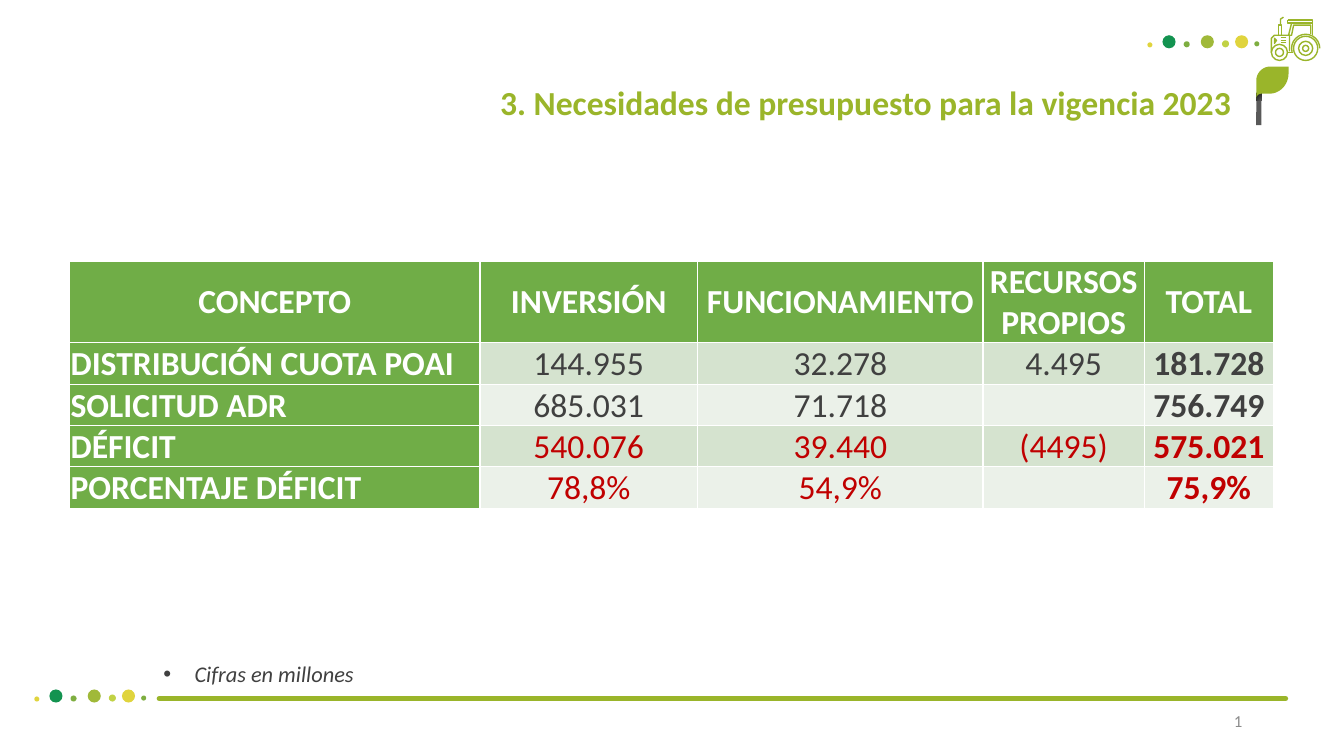
from math import cos, radians, sin

from lxml.etree import SubElement
from pptx import Presentation
from pptx.dml.color import RGBColor
from pptx.enum.dml import MSO_THEME_COLOR
from pptx.enum.shapes import MSO_CONNECTOR, MSO_SHAPE
from pptx.enum.text import MSO_ANCHOR, PP_ALIGN
from pptx.oxml import parse_xml
from pptx.oxml.ns import nsdecls, qn
from pptx.util import Inches, Pt

LIME = RGBColor(0x9A, 0xB5, 0x2A)
EMERALD = RGBColor(0x13, 0x93, 0x50)
LEAF = RGBColor(0x7E, 0xAE, 0x40)
OLIVE = RGBColor(0xA0, 0xB9, 0x39)
PALE_LIME = RGBColor(0xC1, 0xD2, 0x45)
YELLOW = RGBColor(0xE0, 0xD4, 0x3D)
HEADER = RGBColor(0x70, 0xAD, 0x47)
BANDS = RGBColor(0xD5, 0xE3, 0xCF), RGBColor(0xEB, 0xF1, 0xE9)
WHITE = RGBColor(0xFF, 0xFF, 0xFF)
INK = RGBColor(0x40, 0x40, 0x40)
RED = RGBColor(0xC0, 0x00, 0x00)
GRAY = RGBColor(0x8C, 0x8C, 0x8C)
STEM = RGBColor(0x59, 0x59, 0x59)
STEM_SHADE = RGBColor(0x0D, 0x0D, 0x0D)

DOTS = [(0, 0.07, 0.05, YELLOW), (0.15, 0, 0.13, EMERALD), (0.36, 0.06, 0.06, LEAF),
        (0.53, 0, 0.13, OLIVE), (0.74, 0.05, 0.07, PALE_LIME), (0.87, 0, 0.13, YELLOW),
        (1.06, 0.06, 0.05, LEAF)]
COLUMNS = [4.07, 2.16, 2.83, 1.6, 1.28]
ROWS = [0.69, 0.35, 0.35, 0.35, 0.35]
BUDGET = [
    ["CONCEPTO", "INVERSIÓN", "FUNCIONAMIENTO", "RECURSOS PROPIOS", "TOTAL"],
    ["DISTRIBUCIÓN CUOTA POAI", "144.955", "32.278", "4.495", "181.728"],
    ["SOLICITUD ADR", "685.031", "71.718", "", "756.749"],
    ["DÉFICIT", "540.076", "39.440", "(4495)", "575.021"],
    ["PORCENTAJE DÉFICIT", "78,8%", "54,9%", "", "75,9%"],
]


class SlideBuilder:
    def __init__(self, slide, font="Calibri"):
        self.slide = slide
        self.shapes = slide.shapes
        self.font = font

    def style(self, paragraph, size, color, bold=False, italic=False, align=PP_ALIGN.LEFT):
        paragraph.alignment = align
        paragraph.space_before = Pt(0)
        font = paragraph.font
        font.name, font.size, font.bold, font.italic = self.font, Pt(size), bold, italic
        font.color.rgb = color

    def paint(self, shape, fill=None, line=None):
        shape.shadow.inherit = False
        if fill is None:
            shape.fill.background()
        else:
            shape.fill.solid()
            shape.fill.fore_color.rgb = fill
        if line is None:
            shape.line.fill.background()
        else:
            shape.line.color.rgb = line
            shape.line.width = Pt(1)
        return shape

    def preset(self, kind, left, top, width, height, fill=None, line=None):
        box = map(Inches, (left, top, width, height))
        return self.paint(self.shapes.add_shape(kind, *box), fill, line)

    def circle(self, x, y, radius, line):
        self.preset(MSO_SHAPE.OVAL, x - radius, y - radius, 2 * radius, 2 * radius, line=line)

    def outline(self, points, close=False, fill=None, line=None):
        start, *rest = [(Inches(x), Inches(y)) for x, y in points]
        builder = self.shapes.build_freeform(*start)
        builder.add_line_segments(rest, close=close)
        return self.paint(builder.convert_to_shape(), fill, line)

    def line(self, x1, y1, x2, y2, color, width):
        ends = map(Inches, (x1, y1, x2, y2))
        connector = self.shapes.add_connector(MSO_CONNECTOR.STRAIGHT, *ends)
        connector.line.color.rgb = color
        connector.line.width = Pt(width)
        properties = connector._element.spPr
        properties.find(qn("a:ln")).set("cap", "rnd")
        SubElement(properties, qn("a:effectLst"))

    def dots(self, left, top):
        for dx, dy, size, color in DOTS:
            self.preset(MSO_SHAPE.OVAL, left + dx, top + dy, size, size, color)

    def place(self, placeholder, left, top, width, height, text):
        placeholder.left, placeholder.top = Inches(left), Inches(top)
        placeholder.width, placeholder.height = Inches(width), Inches(height)
        frame = placeholder.text_frame
        frame.text = text
        frame.word_wrap = True
        frame.vertical_anchor = MSO_ANCHOR.TOP
        return frame.paragraphs[0]

    def title(self, text, *box):
        self.style(self.place(self.shapes.title, *box, text), 24, LIME, bold=True)

    def note(self, text, *box):
        paragraph = self.place(self.slide.placeholders[1], *box, text)
        properties = paragraph._p.get_or_add_pPr()
        properties.set("marL", str(Inches(0.31)))
        properties.set("indent", str(-Inches(0.31)))
        SubElement(properties, qn("a:buFont"), typeface="Arial")
        SubElement(properties, qn("a:buChar"), char="•")
        self.style(paragraph, 16, INK, italic=True)

    def page_number(self, number, *box):
        frame = self.shapes.add_textbox(*map(Inches, box)).text_frame
        frame.word_wrap = True
        frame.vertical_anchor = MSO_ANCHOR.MIDDLE
        paragraph = frame.paragraphs[0]
        paragraph._p.append(parse_xml(
            f'<a:fld {nsdecls("a")} id="{{B6F15528-21DE-4FAA-801E-634DDDAF4B2B}}" type="slidenum">'
            f'<a:rPr lang="es-CO" sz="1200"><a:solidFill><a:srgbClr val="{GRAY}"/></a:solidFill>'
            f'<a:latin typeface="{self.font}"/></a:rPr><a:t>{number}</a:t></a:fld>'))
        self.style(paragraph, 12, GRAY, align=PP_ALIGN.RIGHT)

    def table(self, left, top, values):
        box = map(Inches, (left, top, sum(COLUMNS), sum(ROWS)))
        table = self.shapes.add_table(len(ROWS), len(COLUMNS), *box).table
        table.first_col = True
        for column, width in zip(table.columns, COLUMNS):
            column.width = Inches(width)
        for r, (row, height) in enumerate(zip(table.rows, ROWS)):
            row.height = Inches(height)
            for c, cell in enumerate(row.cells):
                heading = r == 0 or c == 0
                cell.text = values[r][c]
                cell.vertical_anchor = MSO_ANCHOR.MIDDLE
                cell.margin_left = cell.margin_right = cell.margin_top = Inches(0.01)
                cell.margin_bottom = 0
                cell.fill.solid()
                cell.fill.fore_color.rgb = HEADER if heading else BANDS[(r - 1) % 2]
                color = WHITE if heading else RED if r >= 3 else INK
                align = PP_ALIGN.LEFT if r and c == 0 else PP_ALIGN.CENTER
                self.style(cell.text_frame.paragraphs[0], 24, color,
                           bold=heading or c == len(COLUMNS) - 1, align=align)

    def tractor(self):
        for x, y, radii in ((12.95, 0.48, (0.12, 0.07, 0.03)), (12.69, 0.52, (0.08, 0.04))):
            for radius in radii:
                self.circle(x, y, radius, LIME)
        fender = [(12.95 + 0.14 * cos(radians(a)), 0.48 + 0.14 * sin(radians(a)))
                  for a in range(165, 361, 15)]
        hood = [(12.61, 0.52), (12.61, 0.38), (12.64, 0.35), (12.79, 0.35), (12.79, 0.51)]
        chimney = [(12.68, 0.35), (12.68, 0.25), (12.71, 0.25), (12.71, 0.35)]
        pipe = [(12.7, 0.25), (12.7, 0.19), (12.73, 0.17)]
        roof = [(12.77, 0.2), (13.02, 0.2), (13.02, 0.35)]
        eave = [(12.77, 0.2), (12.77, 0.23), (13.01, 0.23)]
        cab = [(12.81, 0.23), (12.78, 0.35), (12.81, 0.35), (12.83, 0.25), (13, 0.25), (13, 0.34)]
        lamp = [(12.64, 0.38), (12.66, 0.4), (12.64, 0.43), (12.64, 0.38)]
        for part in (fender, hood, chimney, pipe, roof, eave, cab, lamp):
            self.outline(part, line=LIME)
        for y in (0.37, 0.4, 0.42):
            self.line(12.71, y, 12.75, y, LIME, 1)
        self.line(12.77, 0.52, 12.82, 0.52, LIME, 1)

    def sprout(self):
        stem = self.preset(MSO_SHAPE.ROUND_1_RECTANGLE, 12.46, 0.92, 0.05, 0.32, STEM)
        stem._element.spPr.xfrm.set("flipH", "1")
        shade = self.preset(MSO_SHAPE.RECTANGLE, 12.46, 0.92, 0.05, 0.08)
        shade.fill.gradient()
        shade.fill.gradient_angle = 315
        for stop, color in zip(shade.fill.gradient_stops, (STEM_SHADE, STEM)):
            stop.color.theme_color = MSO_THEME_COLOR.TEXT_1
            stop.color.rgb = color
        arcs = [(12.6, 0.8, 0.14, 0.14, 270, 180), (12.51, 0.98, 0.05, 0.05, 180, 270),
                (12.59, 0.73, 0.19, 0.2, 90, 0)]
        leaf = [(x + rx * cos(radians(a)), y + ry * sin(radians(a)))
                for x, y, rx, ry, start, end in arcs
                for a in range(start, end + (1 if end > start else -1), 10 if end > start else -10)]
        self.outline(leaf + [(12.78, 0.66)], close=True, fill=LIME)


def main():
    deck = Presentation()
    deck.slide_width, deck.slide_height = Inches(13.33), Inches(7.5)
    page = SlideBuilder(deck.slides.add_slide(deck.slide_layouts[1]))
    page.dots(11.38, 0.35)
    page.tractor()
    page.dots(0.34, 6.84)
    page.line(1.58, 6.93, 12.75, 6.93, LIME, 3.75)
    page.page_number(5, 9.42, 6.95, 3, 0.4)
    page.table(0.69, 2.59, BUDGET)
    page.title("3. Necesidades de presupuesto para la vigencia 2023", 4.86, 0.76, 7.56, 0.5)
    page.sprout()
    page.note("Cifras en millones", 1.52, 6.5, 10.46, 0.64)
    deck.save("out.pptx")


if __name__ == "__main__":
    main()
